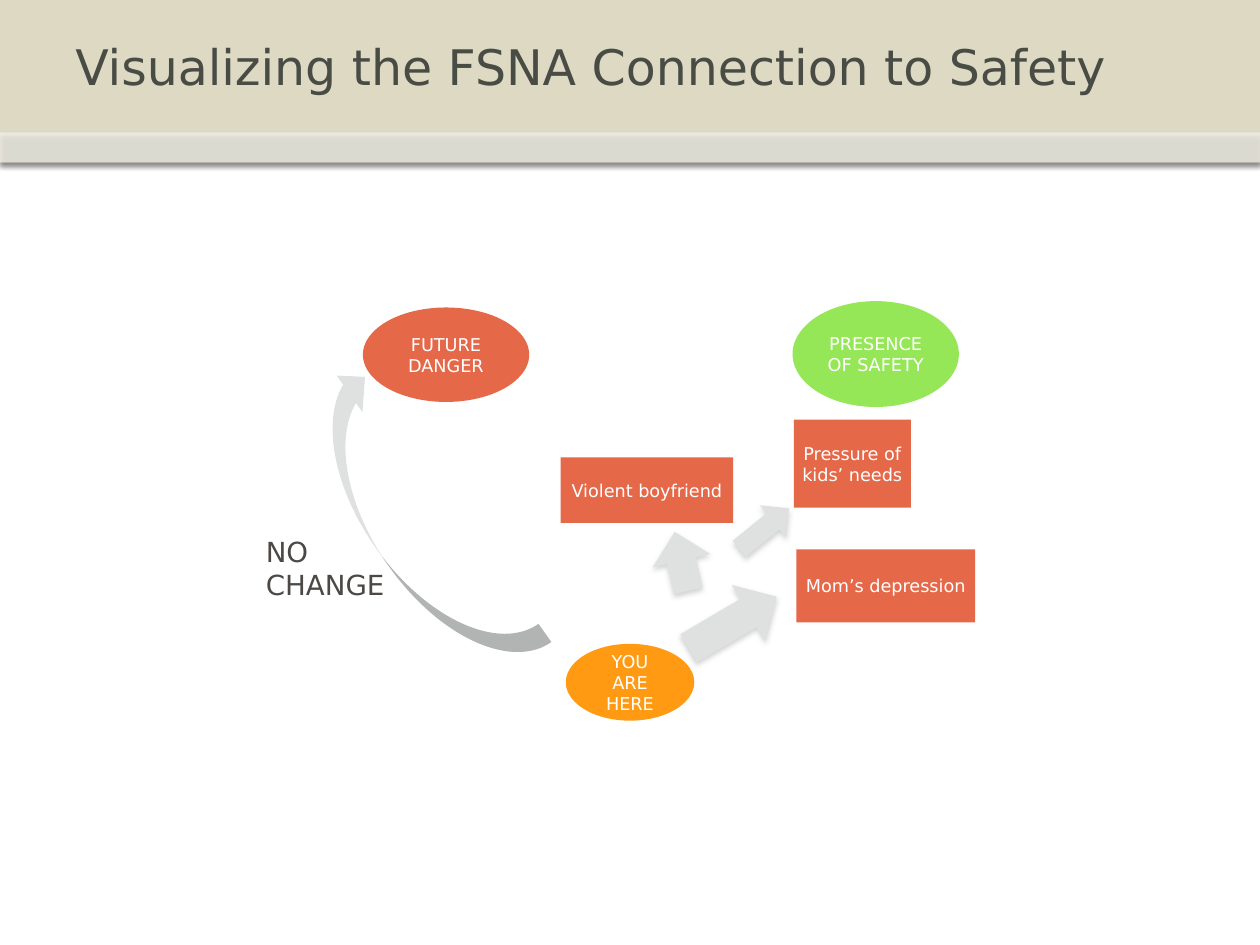
from dataclasses import dataclass
from typing import Optional

from lxml.etree import SubElement
from pptx import Presentation
from pptx.dml.color import RGBColor
from pptx.enum.shapes import MSO_SHAPE
from pptx.enum.text import MSO_ANCHOR, PP_ALIGN
from pptx.oxml.ns import qn
from pptx.util import Inches, Pt


@dataclass(frozen=True)
class Theme:
    font: str = "DejaVu Sans"
    band: str = "DDD9C3"
    white: str = "FFFFFF"
    danger: str = "E56849"
    start: str = "FF9A12"
    safety: str = "96E757"
    arrow: str = "DEE1DF"
    title_text: str = "484C45"
    note_text: str = "4C4845"
    band_shadow: str = "000000"
    arrow_shadow: str = "808080"
    title_size: float = 28
    note_size: float = 15.8
    label_size: float = 10.1


@dataclass(frozen=True)
class Area:
    """Left, top, width and height in columns and rows of the grid."""
    left: float
    top: float
    width: float
    height: float


@dataclass(frozen=True)
class Figure:
    preset: MSO_SHAPE
    area: Area
    color: str
    label: str = ""
    rotation: float = 0
    shadow: Optional[str] = None
    opacity: int = 100


THEME = Theme()
COLUMNS, ROWS = 100, 75
SLIDE_WIDTH, SLIDE_HEIGHT = Inches(10), Inches(7.5)
LABEL_INSETS = (0.06, 0.03)
TITLE_INSETS = (0.1, 0.05)


def to_lengths(area: Area) -> tuple:
    column, row = SLIDE_WIDTH / COLUMNS, SLIDE_HEIGHT / ROWS
    return (round(area.left * column), round(area.top * row),
            round(area.width * column), round(area.height * row))


def set_opacity(shape, percent: int) -> None:
    color = shape.fill._xPr.find(qn("a:solidFill"))[0]
    SubElement(color, qn("a:alpha"), val=str(percent * 1000))


def add_shadow(shape, color: str) -> None:
    effects = shape._element.spPr.find(qn("a:effectLst"))
    shadow = SubElement(effects, qn("a:outerShdw"), blurRad=str(Pt(3.1)),
                        dist=str(Pt(1.8)), dir="5400000", rotWithShape="0")
    shade = SubElement(shadow, qn("a:srgbClr"), val=color)
    SubElement(shade, qn("a:alpha"), val="35000")


def write_text(shape, text: str, size: float, color: str,
               alignment: PP_ALIGN, insets: tuple) -> None:
    frame = shape.text_frame
    side, end = (Inches(inset) for inset in insets)
    frame_format = {
        "word_wrap": True, "vertical_anchor": MSO_ANCHOR.MIDDLE,
        "margin_left": side, "margin_right": side,
        "margin_top": end, "margin_bottom": end,
    }
    for name, value in frame_format.items():
        setattr(frame, name, value)
    paragraph = frame.paragraphs[0]
    paragraph.alignment = alignment
    run = paragraph.add_run()
    run.text = text
    for name, value in {"name": THEME.font, "size": Pt(size)}.items():
        setattr(run.font, name, value)
    run.font.color.rgb = RGBColor.from_string(color)


def draw_figure(slide, figure: Figure) -> None:
    shape = slide.shapes.add_shape(figure.preset, *to_lengths(figure.area))
    shape.rotation = figure.rotation
    shape.fill.solid()
    shape.fill.fore_color.rgb = RGBColor.from_string(figure.color)
    shape.line.fill.background()
    shape.shadow.inherit = False
    if figure.opacity < 100:
        set_opacity(shape, figure.opacity)
    if figure.shadow:
        add_shadow(shape, figure.shadow)
    if figure.label:
        write_text(shape, figure.label, THEME.label_size, THEME.white,
                   PP_ALIGN.CENTER, LABEL_INSETS)


def draw_text(slide, area: Area, text: str, size: float, color: str,
              insets: tuple) -> None:
    box = slide.shapes.add_textbox(*to_lengths(area))
    write_text(box, text, size, color, PP_ALIGN.LEFT, insets)


def bar(top: float, height: float, color: str, opacity: int = 100) -> Figure:
    return Figure(MSO_SHAPE.RECTANGLE, Area(0, top, COLUMNS, height), color,
                  shadow=THEME.band_shadow, opacity=opacity)


def place(area: Area, color: str, label: str) -> Figure:
    return Figure(MSO_SHAPE.OVAL, area, color, label)


def obstacle(area: Area, label: str) -> Figure:
    return Figure(MSO_SHAPE.RECTANGLE, area, THEME.danger, label)


def step(area: Area, rotation: float) -> Figure:
    return Figure(MSO_SHAPE.RIGHT_ARROW, area, THEME.arrow,
                  rotation=rotation, shadow=THEME.arrow_shadow)


HEADER = [bar(0, 12.9, THEME.band), bar(10.5, 2.4, THEME.white, opacity=53)]

DANGER_PATH = [
    place(Area(28.8, 24.4, 13.2, 7.5), THEME.danger, "FUTURE DANGER"),
    place(Area(44.9, 51.1, 10.2, 6.1), THEME.start, "YOU ARE HERE"),
    Figure(MSO_SHAPE.CURVED_DOWN_ARROW, Area(19.2, 38.2, 27.5, 7.1),
           THEME.arrow, rotation=234.9),
]

SAFETY_PATH = [
    place(Area(62.9, 23.9, 13.2, 8.4), THEME.safety, "PRESENCE OF SAFETY"),
    step(Area(54.1, 46.8, 8.1, 5.2), 329.6),
    obstacle(Area(63.2, 43.6, 14.2, 5.8), "Mom’s depression"),
    obstacle(Area(44.5, 36.3, 13.7, 5.2), "Violent boyfriend"),
    step(Area(51.7, 42.2, 4.8, 4.7), 256.9),
    obstacle(Area(63, 33.3, 9.3, 7), "Pressure of kids’ needs"),
    step(Area(58.1, 40.3, 5.1, 3.3), 320.8),
]


def main() -> None:
    presentation = Presentation()
    presentation.slide_width = SLIDE_WIDTH
    presentation.slide_height = SLIDE_HEIGHT
    slide = presentation.slides.add_slide(presentation.slide_layouts[6])

    # Header bars and the way back to danger
    for figure in HEADER + DANGER_PATH:
        draw_figure(slide, figure)
    draw_text(slide, Area(20.5, 41.8, 14.3, 6.5), "NO CHANGE",
              THEME.note_size, THEME.note_text, LABEL_INSETS)

    # Steps and obstacles on the way to safety
    for figure in SAFETY_PATH:
        draw_figure(slide, figure)

    # Title
    draw_text(slide, Area(5, 0, 90, 10.5),
              "Visualizing the FSNA Connection to Safety",
              THEME.title_size, THEME.title_text, TITLE_INSETS)

    presentation.save("out.pptx")


if __name__ == "__main__":
    main()
